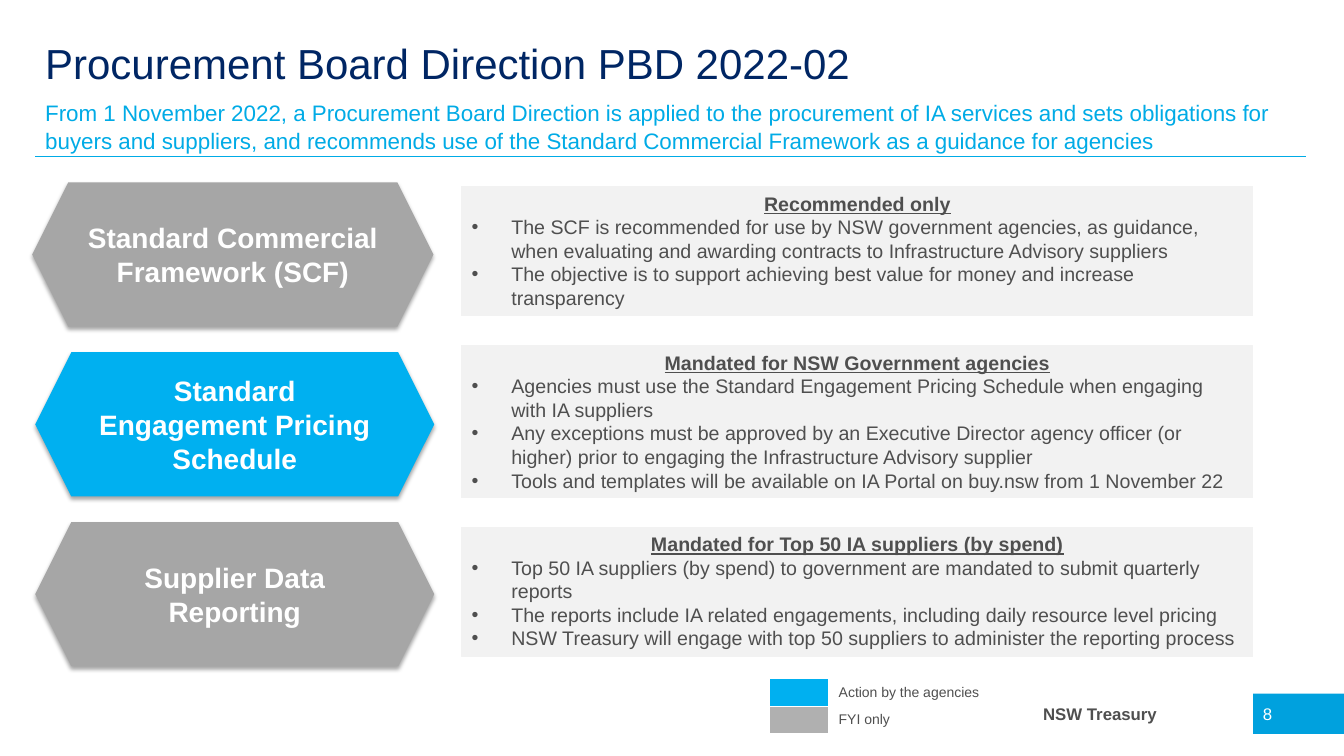
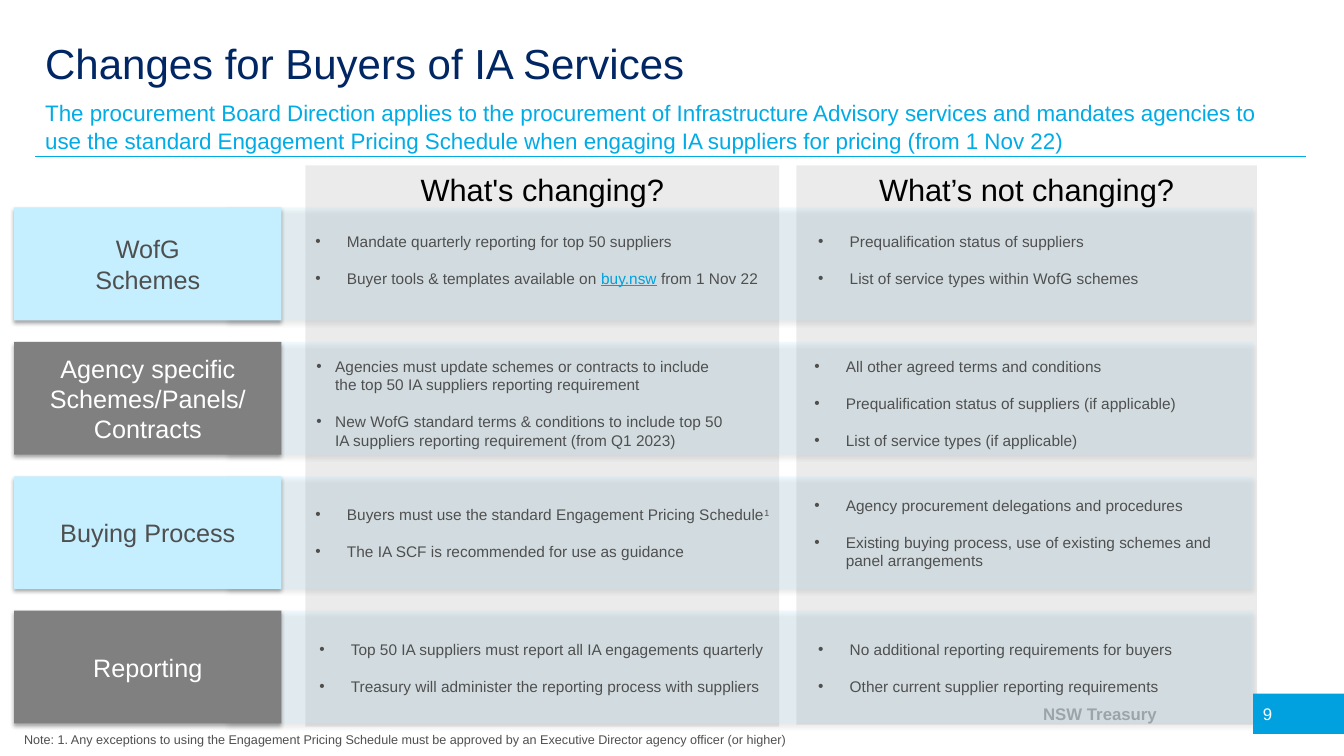
from lxml import etree
from pptx import Presentation, util as u
from pptx.dml.color import RGBColor
from pptx.enum import shapes as kinds, text as t
from pptx.oxml.ns import qn

Pt = u.Pt
FONT = "Arial"
WHITE = RGBColor(0xFF, 0xFF, 0xFF)
BLACK = RGBColor(0, 0, 0)
NAVY = RGBColor(0x00, 0x26, 0x64)
CYAN = RGBColor(0x00, 0xAB, 0xE6)
BLUE = RGBColor(0x00, 0xA1, 0xDE)
ACTION = RGBColor(0x00, 0xB0, 0xF0)
PALE_BLUE = RGBColor(0xC5, 0xEF, 0xFF)
TEXT_GREY = RGBColor(0x4F, 0x4F, 0x4F)
DARK_GREY = RGBColor(0x80, 0x80, 0x80)
MID_GREY = RGBColor(0xA6, 0xA6, 0xA6)
KEY_GREY = RGBColor(0xB0, 0xB0, 0xB0)
COLUMN_GREY = RGBColor(0xDC, 0xDC, 0xDC)
PANEL_GREY = RGBColor(0xF2, 0xF2, 0xF2)
LEFT, CENTER = t.PP_ALIGN.LEFT, t.PP_ALIGN.CENTER
TOP, MIDDLE = t.MSO_ANCHOR.TOP, t.MSO_ANCHOR.MIDDLE
RECT, HEXAGON = kinds.MSO_SHAPE.RECTANGLE, kinds.MSO_SHAPE.HEXAGON

# ---- Content: direction slide
DIRECTION = dict(
    title="Procurement Board Direction PBD 2022-02",
    lead="From 1 November 2022, a Procurement Board Direction is applied to the "
         "procurement of IA services and sets obligations for buyers and suppliers, and "
         "recommends use of the Standard Commercial Framework as a guidance for agencies",
    number="8")
# topic, colour, hexagon left and width, panel top and height, heading, points
OBLIGATIONS = [
    ("Standard Commercial Framework (SCF)", MID_GREY, 23, 286.6, 133.2, 92.2,
     "Recommended only",
     ["The SCF is recommended for use by NSW government agencies, as guidance, when "
      "evaluating and awarding contracts to Infrastructure Advisory suppliers",
      "The objective is to support achieving best value for money and increase "
      "transparency"]),
    ("Standard Engagement Pricing Schedule", ACTION, 25.2, 285, 247, 108.7,
     "Mandated for NSW Government agencies",
     ["Agencies must use the Standard Engagement Pricing Schedule when engaging with "
      "IA suppliers",
      "Any exceptions must be approved by an Executive Director agency officer (or "
      "higher) prior to engaging the Infrastructure Advisory supplier",
      "Tools and templates will be available on IA Portal on buy.nsw from "
      "1 November 22"]),
    ("Supplier Data Reporting", MID_GREY, 25.2, 285, 376.6, 92.2,
     "Mandated for Top 50 IA suppliers (by spend)",
     ["Top 50 IA suppliers (by spend) to government are mandated to submit quarterly "
      "reports",
      "The reports include IA related engagements, including daily resource level "
      "pricing",
      "NSW Treasury will engage with top 50 suppliers to administer the reporting "
      "process"]),
]
LEGEND = [(ACTION, "Action by the agencies"), (KEY_GREY, "FYI only")]

# ---- Content: changes slide
CHANGES = dict(
    title="Changes for Buyers of IA Services",
    lead="The procurement Board Direction applies to the procurement of Infrastructure "
         "Advisory services and mandates agencies to use the standard Engagement Pricing "
         "Schedule when engaging IA suppliers for pricing (from 1 Nov 22)",
    number="9")
COLUMNS = [("What’s not changing?", 568.8, 329, 399.6),
           ("What's changing?", 218.2, 338.4, 401)]
LINK = dict(color=BLUE, underline=True)
# label lines, then cells: left, top, width, indent, points
AREAS = [
    (["WofG", "Schemes"],
     [(218.2, 162, 331.2, 22.5,
       ["Mandate quarterly reporting for top 50 suppliers",
        ["Buyer tools & templates available on ", ("buy.nsw", LINK),
         " from 1 Nov 22"]]),
      (577.4, 162, 309.6, 22.5,
       ["Prequalification status of suppliers",
        "List of service types within WofG schemes"])]),
    (["Agency specific Schemes/Panels/", "Contracts"],
     [(218.9, 251.3, 309.6, 13.5,
       ["Agencies must update schemes or contracts to include the top 50 IA suppliers "
        "reporting requirement",
        "New WofG standard terms & conditions to include top 50 IA suppliers reporting "
        "requirement (from Q1 2023)"]),
      (574.6, 251.3, 309.6, 22.5,
       ["All other agreed terms and conditions",
        "Prequalification status of suppliers (if applicable)",
        "List of service types (if applicable)"])]),
    (["Buying Process"],
     [(218.2, 357.5, 344.2, 22.5,
       [["Buyers must use the standard Engagement Pricing Schedule",
         ("1", dict(raised=True))],
        "The IA SCF is recommended for use as guidance"]),
      (574.6, 350.6, 309.6, 22.5,
       ["Agency procurement delegations and procedures",
        "Existing buying process, use of existing schemes and panel arrangements"])]),
    (["Reporting"],
     [(221, 453.6, 334.8, 22.5,
       ["Top 50 IA suppliers must report all IA engagements quarterly",
        "Treasury will administer the reporting process with suppliers"]),
      (577.4, 453.6, 309.6, 22.5,
       ["No additional reporting requirements for buyers",
        "Other current supplier reporting requirements"])]),
]
NOTE = ("Note: 1. Any exceptions to using the Engagement Pricing Schedule must be "
        "approved by an Executive Director agency officer (or higher)")


# ---- Helpers
def child(parent, tag, **attributes):
    return etree.SubElement(parent, qn(tag), attributes)


def add_run(paragraph, words, size, color, raised=False, **formats):
    run = paragraph.add_run()
    run.text = words
    for name, value in dict(name=FONT, size=Pt(size), **formats).items():
        setattr(run.font, name, value)
    run.font.color.rgb = color
    if raised:
        run._r.get_or_add_rPr().set("baseline", "30000")


def write(frame, paragraphs, size, color, align=LEFT, indent=0, gap=0, more=False,
          line=None, **formats):
    """Fill a frame; a paragraph is a string or a list of strings and (string, formats)."""
    for index, parts in enumerate(paragraphs):
        fresh = more or index > 0
        paragraph = frame.add_paragraph() if fresh else frame.paragraphs[0]
        paragraph.alignment = align
        if indent:
            props = paragraph._p.get_or_add_pPr()
            props.set("marL", str(Pt(indent)))
            props.set("indent", str(-Pt(indent)))
            child(props, "a:buFont", typeface=FONT)
            child(props, "a:buChar", char="•")
        if gap and fresh:
            paragraph.space_before = Pt(gap)
        if line:
            paragraph.line_spacing = Pt(line)
        for part in [parts] if isinstance(parts, str) else parts:
            words, extra = (part, {}) if isinstance(part, str) else part
            add_run(paragraph, words, **{"size": size, "color": color, **formats, **extra})


def add_text(slide, box, paragraphs, size, color, anchor=TOP, **formats):
    frame = slide.shapes.add_textbox(*map(Pt, box)).text_frame
    frame.word_wrap = True
    frame.vertical_anchor = anchor
    write(frame, paragraphs, size, color, **formats)
    return frame


def add_block(slide, kind, box, fill, alpha=None, outline=None, shadow=False, anchor=MIDDLE):
    block = slide.shapes.add_shape(kind, *map(Pt, box))
    block.fill.solid()
    block.fill.fore_color.rgb = fill
    if outline is None:
        block.line.fill.background()
    else:
        block.line.color.rgb = outline
        block.line.width = Pt(0.75)
    block.shadow.inherit = False
    props = block._element.spPr
    if alpha:
        child(props.xpath("./a:solidFill/a:srgbClr")[0], "a:alpha", val=str(alpha * 1000))
    if shadow:
        outer = child(props.find(qn("a:effectLst")), "a:outerShdw", blurRad=str(Pt(3.1)),
                      dist=str(Pt(1.8)), dir="5400000", rotWithShape="0")
        child(child(outer, "a:srgbClr", val="000000"), "a:alpha", val="35000")
    block.text_frame.word_wrap = True
    block.text_frame.vertical_anchor = anchor
    return block.text_frame


def add_base(deck):
    """Start a slide with the rule and footer that lie behind everything."""
    slide = deck.slides.add_slide(deck.slide_layouts[6])
    rule = slide.shapes.add_connector(kinds.MSO_CONNECTOR.STRAIGHT,
                                      Pt(25.2), Pt(111.6), Pt(933.1), Pt(111.6))
    rule.line.color.rgb = CYAN
    rule.line.width = Pt(1)
    child(rule._element.spPr, "a:effectLst")
    add_text(slide, (738, 499, 128.9, 21.6), ["NSW Treasury"], 12, TEXT_GREY, bold=True)
    return slide


def add_heading(slide, title, lead, number):
    frame = add_text(slide, (25.2, 21.6, 908, 46), [title], 30, NAVY)
    frame.margin_top = Pt(5)
    add_text(slide, (25.2, 67.7, 908, 43.9), [lead], 16, CYAN, anchor=MIDDLE, line=20)
    write(add_block(slide, RECT, (895, 495.4, 65, 28.8), BLUE), [number], 12, WHITE)


def add_legend(slide):
    widths, row_height = (42.5, 129.6), 19.7
    table = slide.shapes.add_table(len(LEGEND), 2, Pt(549.4), Pt(484.9),
                                   Pt(sum(widths)), Pt(row_height * len(LEGEND))).table
    table.first_row = table.horz_banding = False
    for column, width in zip(table.columns, widths):
        column.width = Pt(width)
    for row, (color, meaning) in enumerate(LEGEND):
        table.rows[row].height = Pt(row_height)
        for col, fill in enumerate((color, WHITE)):
            cell = table.cell(row, col)
            cell.margin_top = cell.margin_bottom = 0
            cell.vertical_anchor = MIDDLE
            for side in ("a:lnL", "a:lnR", "a:lnT", "a:lnB"):
                border = child(cell._tc.get_or_add_tcPr(), side, w=str(Pt(1)))
                child(child(border, "a:solidFill"), "a:srgbClr", val=str(WHITE))
            cell.fill.solid()
            cell.fill.fore_color.rgb = fill
            cell.text_frame.paragraphs[0].font.size = Pt(10)
        write(table.cell(row, 1).text_frame, [meaning], 10, TEXT_GREY)


# ---- Slides
def build_direction(deck):
    slide = add_base(deck)
    add_heading(slide, **DIRECTION)
    for row, (topic, color, left, width, top, height, heading, points) in enumerate(OBLIGATIONS):
        hexagon = add_block(slide, HEXAGON, (left, 130.3 + 121.3 * row, width, 103), color,
                            shadow=True)
        write(hexagon, [topic], 20, WHITE, align=CENTER, bold=True)
        panel = add_block(slide, RECT, (329.8, top, 565.2, height), PANEL_GREY,
                          outline=PANEL_GREY, anchor=TOP)
        write(panel, [heading], 14, TEXT_GREY, align=CENTER, bold=True, underline=True)
        write(panel, points, 14, TEXT_GREY, indent=28.35, more=True)
    add_legend(slide)


def build_changes(deck):
    slide = add_base(deck)
    for heading, left, width, height in COLUMNS:
        column = add_block(slide, RECT, (left, 118.1, width, height), COLUMN_GREY,
                           alpha=55, anchor=TOP)
        write(column, [heading], 22, BLACK, align=CENTER)
    for row, (label, cells) in enumerate(AREAS):
        top, height = 148.2 + 96 * row, 80.6
        fill, ink = ((PALE_BLUE, TEXT_GREY), (DARK_GREY, WHITE))[row % 2]
        add_block(slide, RECT, (162, top, 733, height), PALE_BLUE, alpha=24, shadow=True)
        tag = add_block(slide, RECT, (10.1, top, 191, height), fill, shadow=True)
        write(tag, label, 18, ink, align=CENTER)
        for left, cell_top, width, indent, points in cells:
            add_text(slide, (left, cell_top, width, 47.5), points, 11, TEXT_GREY,
                     indent=indent, gap=13.2)
    add_heading(slide, **CHANGES)
    add_text(slide, (10.1, 514.1, 707, 28.8), [NOTE], 9, TEXT_GREY, anchor=MIDDLE)


def main():
    deck = Presentation()
    deck.slide_width, deck.slide_height = Pt(960), Pt(540)
    build_direction(deck)
    build_changes(deck)
    deck.save("out.pptx")


if __name__ == "__main__":
    main()
